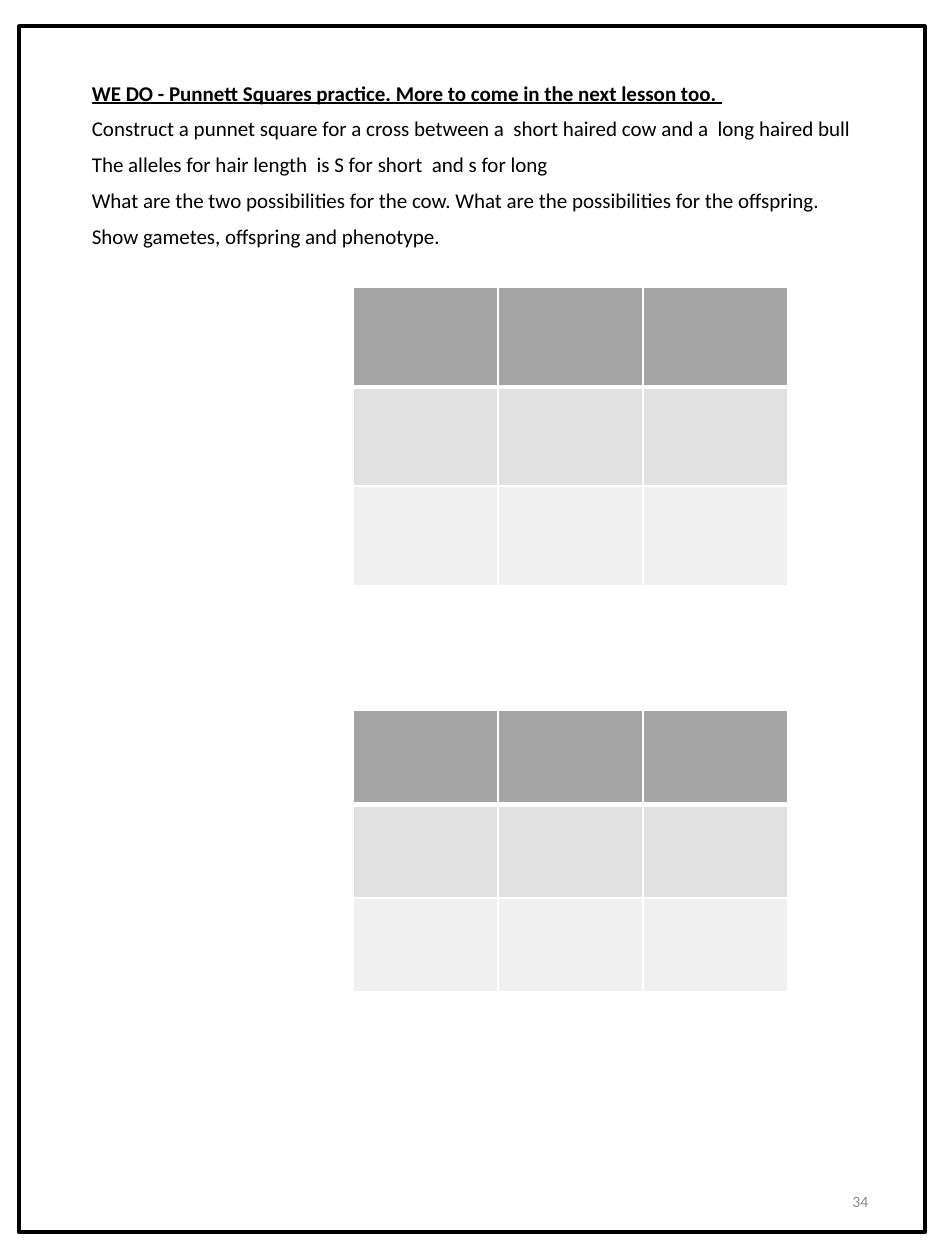
from dataclasses import dataclass

from lxml import etree
from pptx import Presentation
from pptx.dml.color import RGBColor
from pptx.enum.shapes import MSO_SHAPE
from pptx.enum.text import MSO_ANCHOR, PP_ALIGN
from pptx.oxml.ns import qn
from pptx.util import Pt

RECT = MSO_SHAPE.RECTANGLE
TOP, MIDDLE = MSO_ANCHOR.TOP, MSO_ANCHOR.MIDDLE
LEFT, RIGHT = PP_ALIGN.LEFT, PP_ALIGN.RIGHT


@dataclass(frozen=True)
class Theme:
    font: str = "Calibri"
    body: float = 12
    small: float = 9
    ink: str = "000000"
    muted: str = "8C8C8C"
    rule: str = "FFFFFF"
    bands: tuple = ("A5A5A5", "E1E1E1", "F0F0F0")


class Page:
    def __init__(self, slide, theme):
        self.slide = slide
        self.theme = theme

    def text(self, box, lines, size, color, align=LEFT, anchor=TOP, before=0, spacing=1):
        shape = self.slide.shapes.add_textbox(*map(Pt, box))
        frame = shape.text_frame
        frame.word_wrap = True
        frame.vertical_anchor = anchor
        frame.text = "\n".join(lines)
        for para in frame.paragraphs:
            para.alignment = align
            para.space_before = Pt(before)
            para.line_spacing = spacing
            for run in para.runs:
                run.font.name = self.theme.font
                run.font.size = Pt(size)
                run.font.color.rgb = RGBColor.from_string(color)
        return frame

    def edge(self, cell, side, width):
        props = cell._tc.get_or_add_tcPr()
        line = etree.SubElement(props, qn("a:" + side), w=str(Pt(width)))
        fill = etree.SubElement(line, qn("a:solidFill"))
        etree.SubElement(fill, qn("a:srgbClr"), val=self.theme.rule)

    def square(self, left, top, width, height):
        """Empty Punnett square with one colour per row."""
        count = len(self.theme.bands)
        box = map(Pt, (left, top, width, height))
        table = self.slide.shapes.add_table(count, count, *box).table
        for col in table.columns:
            col.width = Pt(width / count)
        for i, color in enumerate(self.theme.bands):
            table.rows[i].height = Pt(height / count)
            # The header is set off by a thicker rule
            edges = {"lnL": 1, "lnR": 1, "lnT": 3 if i == 1 else 1, "lnB": 3 if i == 0 else 1}
            for cell in table.rows[i].cells:
                for side, weight in edges.items():
                    self.edge(cell, side, weight)
                cell.fill.solid()
                cell.fill.fore_color.rgb = RGBColor.from_string(color)

    def border(self, box, weight):
        shape = self.slide.shapes.add_shape(RECT, *map(Pt, box))
        shape.shadow.inherit = False
        shape.fill.background()
        shape.line.color.rgb = RGBColor.from_string(self.theme.ink)
        shape.line.width = Pt(weight)


def main():
    deck = Presentation()
    deck.slide_width, deck.slide_height = Pt(540), Pt(720)
    theme = Theme()
    page = Page(deck.slides.add_slide(deck.slide_layouts[6]), theme)

    # Task
    lines = (
        "WE DO - Punnett Squares practice. More to come in the next lesson too. ",
        "Construct a punnet square for a cross between a  short haired cow and a  long haired bull",
        "The alleles for hair length  is S for short  and s for long",
        "What are the two possibilities for the cow. What are the possibilities for the offspring.",
        "Show gametes, offspring and phenotype.",
    )
    task = page.text((45.4, 43.9, 465.8, 616.3), lines, theme.body, theme.ink,
                     before=7.5, spacing=0.9)
    title = task.paragraphs[0].runs[0].font
    title.bold = title.underline = True

    # Punnett squares
    for top, height in ((164.3, 170.4), (406.1, 160.5)):
        page.square(201.8, top, 248.4, height)

    # Page border and number
    page.border((10.8, 15.1, 517.7, 689), 2.25)
    page.text((381.6, 667.4, 121.7, 38.2), ("34",), theme.small, theme.muted,
              align=RIGHT, anchor=MIDDLE)

    deck.save("out.pptx")


if __name__ == "__main__":
    main()
